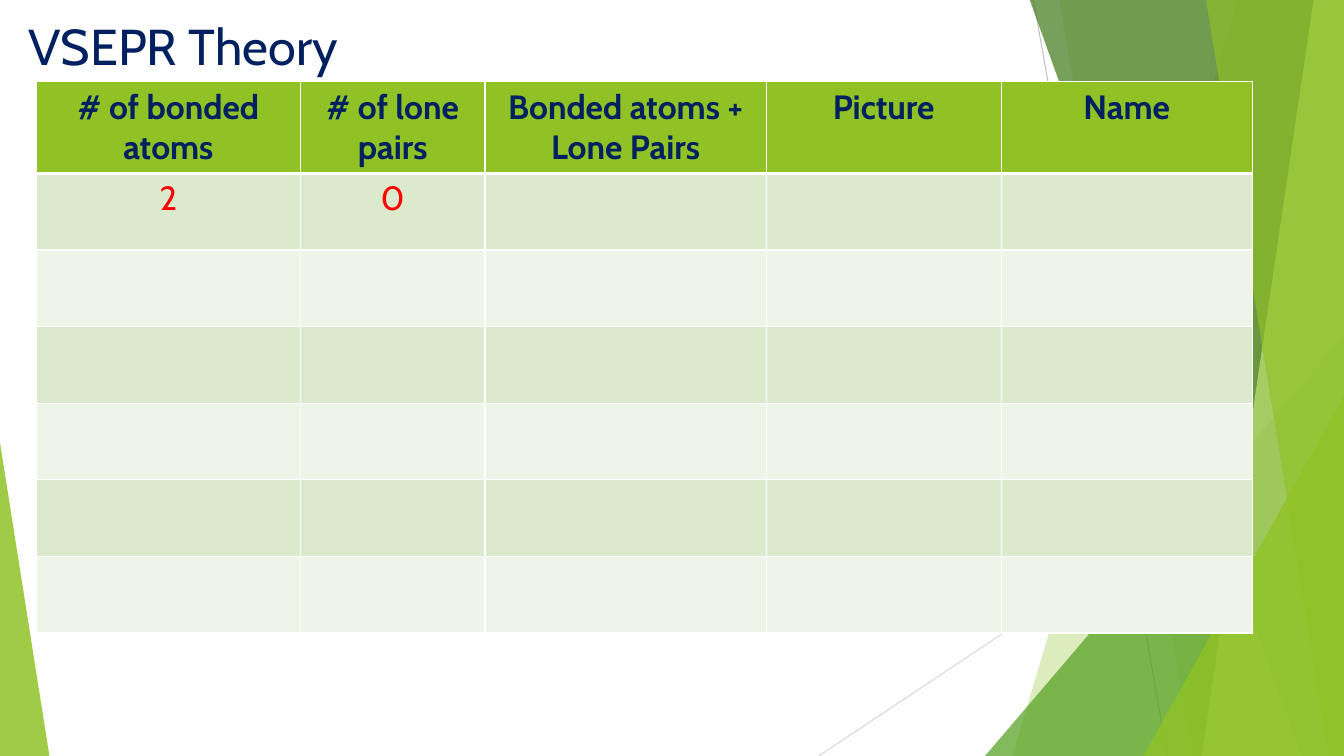
"""Build the VSEPR theory slide with its green facet backdrop and table."""
from dataclasses import dataclass
from typing import Union

from lxml import etree
from pptx import Presentation, util as u
from pptx.dml import color
from pptx.enum import shapes, text
from pptx.oxml import ns

WIDTH, HEIGHT = 13.33, 7.5
BLEED = -0.01
FONT = "Cabin"
NAVY, RED, GREEN, WHITE = "002060", "FF0000", "90C226", "FFFFFF"
BANDS = ("DBE9CD", "EEF4E8")
HEADERS = ("# of bonded atoms", "# of lone pairs", "Bonded atoms + Lone Pairs",
           "Picture", "Name")
FIRST_ROW = ("2", "0")
COL_WIDTHS = (2.62, 1.83, 2.79, 2.33, 2.49)
ROW_HEIGHT, ROW_COUNT = 0.76, 7


@dataclass
class Ray:
    x1: float
    y1: float
    x2: float
    y2: float
    color: str


@dataclass
class Wedge:
    x_top: float
    x_bottom: float
    color: str
    alpha: int


@dataclass
class Triangle:
    left: float
    top: float
    width: float
    apex: float
    color: str
    alpha: int


RAYS = (
    Ray(10.25, 0, 11.58, HEIGHT, "BFBFBF"),
    Ray(WIDTH, 4.03, 8.12, HEIGHT, "D9D9D9"),
)
FACETS = (
    Wedge(12.28, 10.04, GREEN, 30),
    Wedge(10.5, 11.83, GREEN, 20),
    Triangle(9.77, 3.33, 3.56, 1, "54A021", 72),
    Wedge(10.21, 12.91, "3F7819", 70),
    Wedge(13.03, 11.92, "C0E474", 70),
    Wedge(11.96, 13.18, GREEN, 65),
    Triangle(11.34, 3.93, 1.99, 1, GREEN, 80),
    Triangle(0, 4.39, 0.49, 0, GREEN, 85),
)


def rgb(value: str) -> color.RGBColor:
    return color.RGBColor.from_string(value)


def paint(fill, value: str) -> None:
    fill.solid()
    fill.fore_color.rgb = rgb(value)


def style_text(p, size: float, value: str, bold: bool = False) -> None:
    for r in p.runs:
        r.font.name = FONT
        r.font.size = u.Pt(size)
        r.font.bold = bold
        r.font.color.rgb = rgb(value)


def draw_ray(s, ray: Ray) -> None:
    line = s.shapes.add_connector(
        shapes.MSO_CONNECTOR.STRAIGHT, u.Inches(ray.x1), u.Inches(ray.y1),
        u.Inches(ray.x2), u.Inches(ray.y2))
    line.line.color.rgb = rgb(ray.color)
    line.line.width = u.Pt(0.75)
    etree.SubElement(line._element.spPr, ns.qn("a:effectLst"))


def draw_facet(s, facet: Union[Wedge, Triangle]) -> None:
    if isinstance(facet, Wedge):
        corners = [(u.Inches(x), u.Inches(y)) for x, y in (
            (facet.x_top, BLEED), (WIDTH, BLEED),
            (WIDTH, HEIGHT), (facet.x_bottom, HEIGHT))]
        builder = s.shapes.build_freeform(*corners[0])
        builder.add_line_segments(corners[1:], close=True)
        sp = builder.convert_to_shape()
    else:
        sp = s.shapes.add_shape(
            shapes.MSO_SHAPE.ISOSCELES_TRIANGLE, u.Inches(facet.left),
            u.Inches(facet.top), u.Inches(facet.width),
            u.Inches(HEIGHT - facet.top))
        sp.adjustments[0] = facet.apex
    sp.shadow.inherit = False
    sp.line.fill.background()
    paint(sp.fill, facet.color)
    clr = sp._element.spPr.find(f"{ns.qn('a:solidFill')}/{ns.qn('a:srgbClr')}")
    etree.SubElement(clr, ns.qn("a:alpha"), val=str(facet.alpha * 1000))


def draw_borders(cell, row: int) -> None:
    widths = {"L": 1, "R": 1, "T": 3 if row == 1 else 1, "B": 3 if row == 0 else 1}
    tc_pr = cell._tc.get_or_add_tcPr()
    for side, width in widths.items():
        ln = etree.SubElement(tc_pr, ns.qn(f"a:ln{side}"), w=str(u.Pt(width)))
        fill = etree.SubElement(ln, ns.qn("a:solidFill"))
        etree.SubElement(fill, ns.qn("a:srgbClr"), val=WHITE)


def draw_table(s) -> None:
    table = s.shapes.add_table(
        ROW_COUNT, len(COL_WIDTHS), u.Inches(0.36), u.Inches(0.81),
        u.Inches(sum(COL_WIDTHS)), u.Inches(ROW_HEIGHT * ROW_COUNT)).table
    for column, width in zip(table.columns, COL_WIDTHS):
        column.width = u.Inches(width)
    for i, row in enumerate(table.rows):
        row.height = u.Inches(ROW_HEIGHT)
        for cell in row.cells:
            draw_borders(cell, i)
            paint(cell.fill, BANDS[(i - 1) % 2] if i else GREEN)
    for i, (words, value) in enumerate(((HEADERS, NAVY), (FIRST_ROW, RED))):
        for j, word in enumerate(words):
            p = table.cell(i, j).text_frame.paragraphs[0]
            p.text = word
            p.alignment = text.PP_ALIGN.CENTER
            style_text(p, 24, value, bold=i == 0)


def draw_title(s) -> None:
    title = s.shapes.title
    title.left, title.top = u.Inches(0.18), u.Inches(0.1)
    title.width, title.height = u.Inches(9.4), u.Inches(1.44)
    tf = title.text_frame
    tf.text = "VSEPR Theory"
    tf.vertical_anchor = text.MSO_ANCHOR.TOP
    p = tf.paragraphs[0]
    p.alignment = text.PP_ALIGN.LEFT
    style_text(p, 36, NAVY)


def main() -> None:
    prs = Presentation()
    prs.slide_width, prs.slide_height = u.Inches(WIDTH), u.Inches(HEIGHT)
    s = prs.slides.add_slide(prs.slide_layouts[5])
    paint(s.background.fill, WHITE)
    for ray in RAYS:
        draw_ray(s, ray)
    for facet in FACETS:
        draw_facet(s, facet)
    draw_title(s)
    draw_table(s)
    prs.save("out.pptx")


if __name__ == "__main__":
    main()
